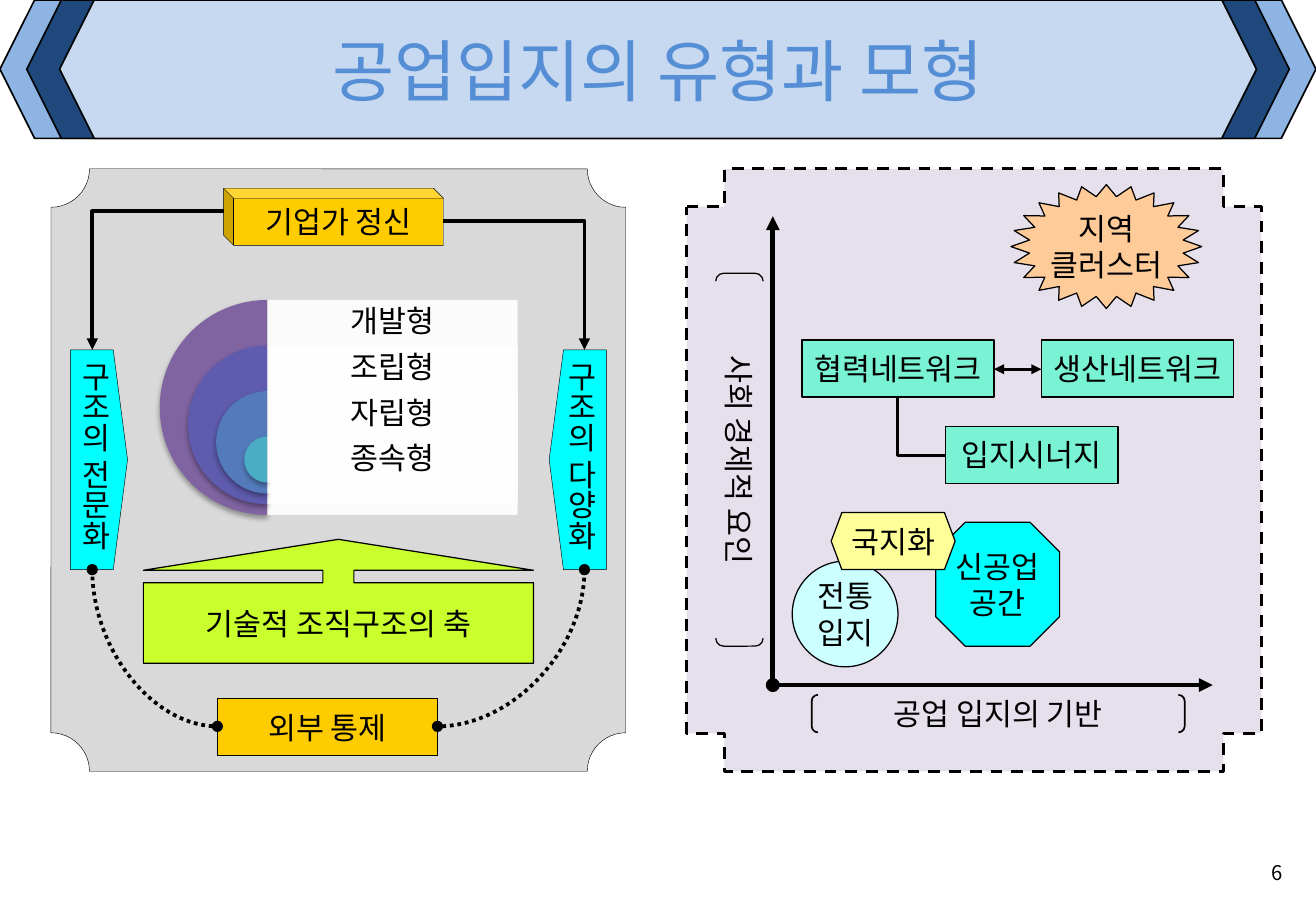
from pptx import Presentation
from pptx.dml.color import RGBColor
from pptx.enum.dml import MSO_LINE as DASH
from pptx.enum.shapes import MSO_CONNECTOR as CONN, MSO_SHAPE as SHP
from pptx.enum.text import MSO_ANCHOR, MSO_AUTO_SIZE, PP_ALIGN as AL
from pptx.oxml.ns import qn
from pptx.util import Inches, Pt
from lxml.etree import SubElement

BLACK = "000000"


def paint(color_format, color):
    color_format.rgb = RGBColor.from_string(color)


class SlideBuilder:
    font = "Noto Sans CJK KR"
    size = 18

    def __init__(self, prs):
        self.s = prs.slides.add_slide(prs.slide_layouts[5])

    def set_text(self, sp, text, size=None, color=BLACK, align=AL.CENTER,
                 wrap=False, vert=None, inset=None, spacing=None):
        tf = sp.text_frame
        tf.auto_size = MSO_AUTO_SIZE.NONE
        tf.word_wrap = wrap
        tf.vertical_anchor = MSO_ANCHOR.MIDDLE
        if inset is not None:
            tf.margin_left = tf.margin_right = Inches(inset)
            tf.margin_top = tf.margin_bottom = Inches(inset)
        if vert:
            tf._txBody.bodyPr.set("vert", vert)
        tf.text = text
        for p in tf.paragraphs:
            p.alignment = align
            if spacing:
                p.line_spacing = spacing
            p.font.size = Pt(size or self.size)
            p.font.name = self.font
            paint(p.font.color, color)
            SubElement(p.font._element, qn("a:ea"), typeface=self.font)

    def title(self, text, box, size, color):
        sp = self.s.shapes.title
        sp.left, sp.top, sp.width, sp.height = map(Inches, box)
        self.set_text(sp, text, size, color, wrap=True)
        # Bring the title in front of the banner
        self.s.shapes._spTree.append(sp._element)

    def textbox(self, text, box, **style):
        sp = self.s.shapes.add_textbox(*map(Inches, box))
        self.set_text(sp, text, wrap=True, **style)

    def shape(self, kind, box, fill=None, line=0.75, text=None, adj=(),
              flip=False, rot=0, dash=None, alpha=None, **style):
        sp = self.s.shapes.add_shape(kind, *map(Inches, box))
        sp.shadow.inherit = False
        sp.rotation = rot
        for i, value in enumerate(adj):
            sp.adjustments[i] = value
        if flip:
            sp._element.spPr.xfrm.set("flipH", "1")
        if fill:
            sp.fill.solid()
            paint(sp.fill.fore_color, fill)
            if alpha:
                clr = sp._element.spPr.find(".//" + qn("a:srgbClr"))
                SubElement(clr, qn("a:alpha"), val=str(alpha * 1000))
        else:
            sp.fill.background()
        if line:
            sp.line.width = Pt(line)
            paint(sp.line.color, BLACK)
            if dash:
                sp.line.dash_style = dash
        else:
            sp.line.fill.background()
        if text:
            self.set_text(sp, text, **style)
        return sp

    def drop_shadow(self, sp, blur, dist, alpha):
        effects = sp._element.spPr.find(qn("a:effectLst"))
        shadow = SubElement(effects, qn("a:outerShdw"), blurRad=str(Pt(blur)),
                            dist=str(Pt(dist)), dir="5400000", rotWithShape="0")
        clr = SubElement(shadow, qn("a:srgbClr"), val=BLACK)
        SubElement(clr, qn("a:alpha"), val=str(alpha * 1000))

    def connect(self, start, end, width, head=None, tail=None, prst=None,
                dash=None, glue=None):
        c = self.s.shapes.add_connector(CONN.STRAIGHT, *map(Inches, start + end))
        if prst:
            c._element.spPr.find(qn("a:prstGeom")).set("prst", prst)
        c.line.width = Pt(width)
        paint(c.line.color, BLACK)
        if dash:
            c.line.dash_style = dash
        ln = c.line._get_or_add_ln()
        for tag, end_type in (("a:headEnd", head), ("a:tailEnd", tail)):
            if end_type:
                SubElement(ln, qn(tag), type=end_type)
        SubElement(c._element.spPr, qn("a:effectLst"))
        if glue:
            # Attach to connection sites while keeping the given end points
            (first, site1), (last, site2) = glue
            c._connect_begin_to(first, site1)
            c._connect_end_to(last, site2)


def main():
    prs = Presentation()
    prs.slide_width, prs.slide_height = Inches(10.83), Inches(7.5)
    b = SlideBuilder(prs)

    # Title banner
    for left, color in ((0, "8EB4E3"), (0.22, "1F497D"), (0.49, "C6D9F1")):
        b.shape(SHP.HEXAGON, (left, 0, 10.83 - 2 * left, 1.14), color, 1)
    b.title("공업입지의 유형과 모형", (0, 0, 10.83, 1.15), 40, "558ED5")
    b.textbox("6 ", (9.75, 6.98, 0.94, 0.4), size=12, align=AL.RIGHT)

    # Right panel: location models
    b.shape(SHP.CROSS, (5.65, 1.39, 4.73, 4.96), "E6E0EC", 1.75,
            adj=[0.066], dash=DASH.DASH)
    b.shape(SHP.OVAL, (6.52, 4.62, 0.87, 0.87), "CCFFFF", text="전통\n입지")
    b.shape(SHP.DOUBLE_BRACKET, (6.68, 5.72, 3.07, 0.31), line=1,
            text="공업 입지의 기반")
    synergy, production, partner = [
        b.shape(SHP.RECTANGLE, (x, y, w, 0.47), "79F3D3", text=text)
        for x, y, w, text in ((7.78, 3.51, 1.42, "입지시너지"),
                              (8.57, 2.8, 1.58, "생산네트워크"),
                              (6.6, 2.8, 1.58, "협력네트워크"))]
    b.shape(SHP.STAR_24_POINT, (8.32, 1.52, 1.57, 1.02), "FFCC99",
            text="지역\n클러스터", adj=[0.406])
    b.connect((8.18, 3.04), (8.57, 3.04), 1.75, "triangle", "triangle",
              glue=((partner, 3), (production, 1)))
    b.connect((7.78, 3.75), (7.39, 3.28), 1.75, prst="bentConnector2",
              glue=((synergy, 1), (partner, 2)))
    b.shape(SHP.DOUBLE_BRACKET, (4.55, 3.59, 3.07, 0.39), rot=90,
            text="사회 경제적 요인", adj=[0.167])
    b.shape(SHP.OCTAGON, (7.7, 4.3, 1.02, 1.02), "00FFFF",
            text="신공업\n공간", adj=[0.239])
    b.shape(SHP.HEXAGON, (6.84, 4.22, 1.02, 0.47), "FFFF99",
            text="국지화", adj=[0.187])
    for axis_end in ((9.98, 5.64), (6.36, 1.78)):
        b.connect((6.36, 5.64), axis_end, 2.75, "oval", "triangle")

    # Left panel: enterprise structure
    b.shape(SHP.PLAQUE, (0.42, 1.39, 4.73, 4.96), "D9D9D9", 0.25, adj=[0.067])
    spirit = b.shape(SHP.CUBE, (1.84, 1.55, 1.81, 0.47), "FFCC00", 0.25,
                     "기업가 정신", adj=[0.176], flip=True)
    special, diverse = [
        b.shape(SHP.PENTAGON, (x, 2.88, 0.47, 1.81), "00FFFF", 0.25, text,
                adj=[0.25], flip=flip, vert="eaVert")
        for x, text, flip in ((0.58, "구조의 전문화", False),
                              (4.52, "구조의 다양화", True))]
    control = b.shape(SHP.RECTANGLE, (1.79, 5.75, 1.81, 0.47), "FFCC00", 0.25,
                      "외부 통제")

    # Links from spirit to structures, and between control and structures
    for x, target, start, spirit_site, control_x, control_site in (
            (4.81, diverse, (3.65, 1.82), 2, 3.6, 3),
            (0.76, special, (1.84, 1.74), 5, 1.79, 1)):
        b.connect(start, (x, 2.88), 2.25, tail="triangle",
                  prst="bentConnector2",
                  glue=((spirit, spirit_site), (target, 0)))
        b.connect((control_x, 5.98), (x, 4.69), 2.25, "oval", "oval",
                  prst="curvedConnector2", dash=DASH.ROUND_DOT,
                  glue=((control, control_site), (target, 2)))

    # Nested half discs with labels
    types = (("개발형", "8064A2"), ("조립형", "5F5BAE"),
             ("자립형", "537ABA"), ("종속형", "4BACC6"))
    for i, (text, color) in enumerate(types):
        top, d = 2.47 + 0.375 * i, 1.77 - 0.464 * i
        disc = b.shape(SHP.PIE, (2.2 - d / 2, top, d, d), color, 0,
                       adj=[54, 162])
        b.drop_shadow(disc, 3.1, 1.8, 35)
        b.shape(SHP.RECTANGLE, (2.2, top, 2.06, d), "FFFFFF", 0, alpha=90)
        b.textbox(text, (2.2, top, 2.06, 0.38), inset=0.07, spacing=0.9)

    b.shape(SHP.UP_ARROW_CALLOUT, (1.18, 4.44, 3.21, 1.02), "C8FF2D",
            text="기술적 조직구조의 축", adj=[0.25, 1.779, 0.25, 0.65], wrap=True)

    prs.save("out.pptx")


if __name__ == "__main__":
    main()
